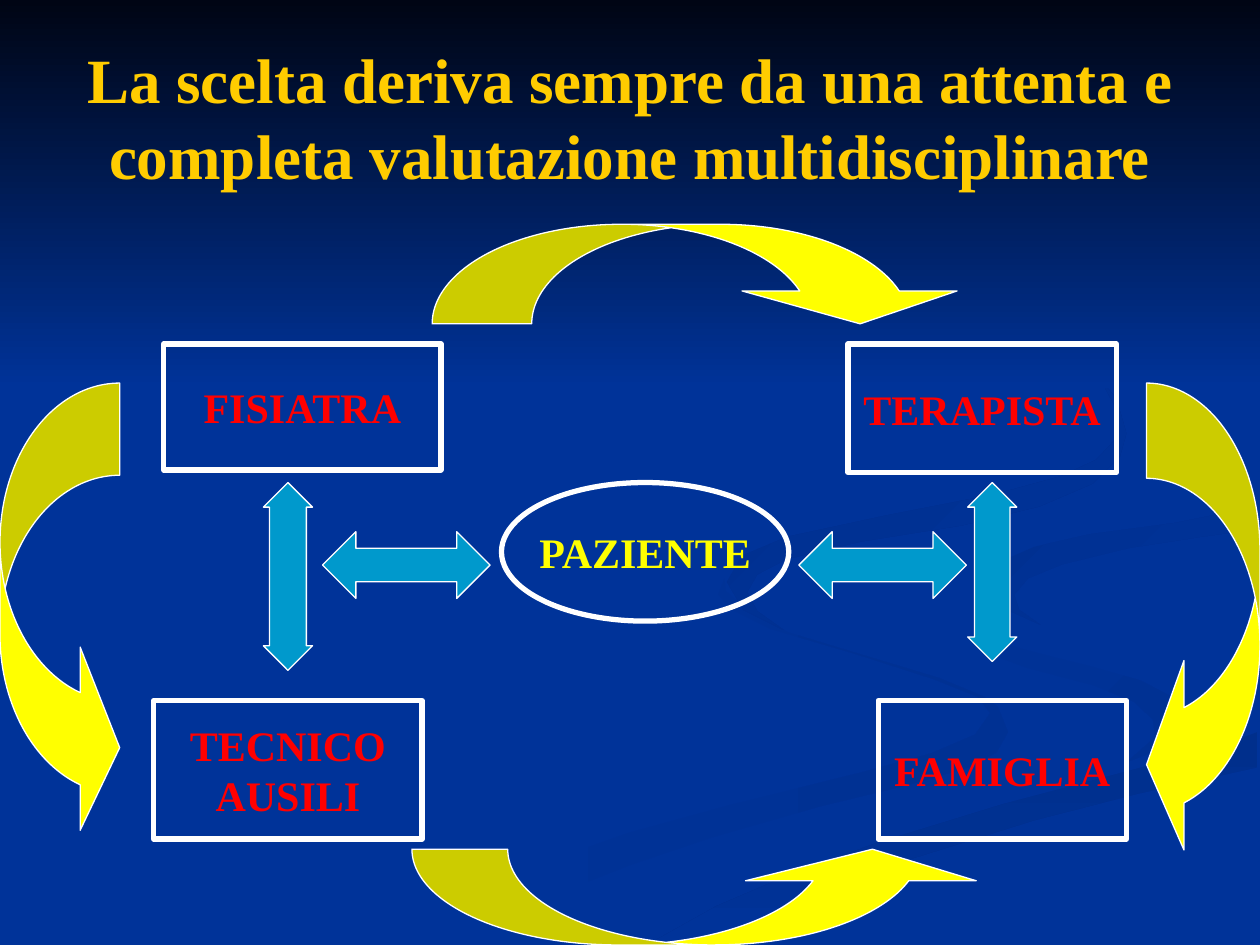
import pptx
import pptx.dml.color
import pptx.enum.shapes
import pptx.enum.text
import pptx.util

Inches = pptx.util.Inches
SHAPE = pptx.enum.shapes.MSO_SHAPE
FONT = "Times New Roman"
NAVY, WHITE, GOLD, YELLOW, RED, TEAL = (
    "003399", "FFFFFF", "FFCC00", "FFFF00", "FF0000", "0099CC")

# Background ribbons: start colour, end colour, clockwise angle, outline
RIBBONS = [
    (NAVY, "003193", 0, [
        (7.81, 5.53), (7.45, 5.38), (6.82, 5.19), (6.26, 5.02), (5.94, 4.85),
        (5.76, 4.69), (5.75, 4.59), (5.7, 4.72), (5.81, 4.84), (6.11, 4.99),
        (6.79, 5.19), (7.41, 5.39), (7.76, 5.53), (7.86, 5.66), (7.74, 5.83),
        (7.39, 5.98), (6.84, 6.13), (5.79, 6.39), (4.99, 6.61), (4.17, 6.9),
        (3.38, 7.27), (3, 7.49), (3.61, 7.49), (4.31, 7.14), (4.99, 6.87),
        (5.64, 6.65), (6.51, 6.4), (7.21, 6.23), (7.69, 6.09), (7.91, 5.97),
        (8, 5.81), (7.92, 5.61)]),
    (NAVY, "003193", 45, [
        (9.43, 5.7), (9.3, 5.53), (9.05, 5.4), (8.7, 5.3), (8.11, 5.15),
        (7.58, 4.98), (7.33, 4.83), (7.24, 4.64), (7.27, 4.79), (7.39, 4.94),
        (7.66, 5.12), (8.15, 5.3), (8.68, 5.44), (9, 5.57), (9.15, 5.71),
        (9.17, 5.85), (8.94, 6.05), (9.25, 5.93), (9.41, 5.81)]),
    ("002F8C", NAVY, 90, [
        (5.03, 7.49), (5.71, 7.49), (6, 7.33), (6.49, 7.1), (7.22, 6.82),
        (8.21, 6.51), (9.03, 6.3), (9.98, 6.09), (9.98, 5.81), (9.63, 5.94),
        (9.03, 6.1), (7.97, 6.38), (6.96, 6.69), (6.3, 6.93), (5.69, 7.19),
        (5.19, 7.47)]),
    ("003091", NAVY, 45, [
        (7.81, 4.6), (7.86, 4.74), (7.97, 4.83), (8.26, 4.96), (8.09, 4.84),
        (8.05, 4.72), (8.16, 4.59), (8.43, 4.48), (8.96, 4.35), (9.54, 4.26),
        (9.98, 4.2), (9.98, 4.02), (9.33, 4.15), (8.65, 4.24), (8.21, 4.34),
        (7.91, 4.47)]),
    ("002F8E", NAVY, 45, [
        (6.83, 4.3), (7.64, 4.17), (8.25, 4.02), (8.67, 3.84), (8.89, 3.62),
        (8.94, 3.44), (8.86, 3.16), (8.64, 2.91), (8.21, 2.61), (7.8, 2.41),
        (7.62, 2.33), (8.05, 2.54), (8.46, 2.79), (8.76, 3.06), (8.88, 3.28),
        (8.86, 3.48), (8.7, 3.65), (8.42, 3.78), (7.91, 3.92), (7.04, 4.09),
        (6.25, 4.26), (5.89, 4.41), (5.77, 4.62), (5.9, 4.84), (6.22, 5),
        (6.01, 4.85), (5.93, 4.7), (6.01, 4.56), (6.24, 4.44)]),
]

ROLES = [
    (SHAPE.OVAL, (3.98, 3.83, 2.28, 1.1), "PAZIENTE", YELLOW),
    (SHAPE.RECTANGLE, (1.3, 2.73, 2.2, 1), "FISIATRA", RED),
    (SHAPE.RECTANGLE, (6.73, 2.73, 2.13, 1.02), "TERAPISTA", RED),
    (SHAPE.RECTANGLE, (1.22, 5.56, 2.13, 1.1), "TECNICO\nAUSILI", RED),
    (SHAPE.RECTANGLE, (6.97, 5.56, 1.97, 1.1), "FAMIGLIA", RED),
]

ARROWS = [
    (SHAPE.UP_DOWN_ARROW, (2.09, 3.83, 0.39, 1.49), (0.5, 0.75), TEAL),
    (SHAPE.UP_DOWN_ARROW, (7.68, 3.83, 0.39, 1.42), (0.5, 0.72), TEAL),
    (SHAPE.LEFT_RIGHT_ARROW, (2.56, 4.22, 1.33, 0.53), (0.5, 0.5), TEAL),
    (SHAPE.LEFT_RIGHT_ARROW, (6.34, 4.22, 1.33, 0.53), (0.5, 0.5), TEAL),
    (SHAPE.CURVED_RIGHT_ARROW, (0, 3.04, 0.95, 3.62), (0.77, 1.53, 0.33), YELLOW),
    (SHAPE.CURVED_UP_ARROW, (3.27, 6.74, 4.57, 0.76), (1.21, 2.41, 0.33), YELLOW),
    (SHAPE.CURVED_LEFT_ARROW, (9.1, 3.04, 0.9, 3.78), (0.84, 1.67, 0.33), YELLOW),
    (SHAPE.CURVED_DOWN_ARROW, (3.43, 1.78, 4.25, 0.79), (1.08, 2.16, 0.33), YELLOW),
]


def rgb(color):
    return pptx.dml.color.RGBColor.from_string(color)


def set_gradient(sp, start, end, angle):
    """Fill without outline; the angle runs clockwise in degrees."""
    sp.shadow.inherit = False
    sp.line.fill.background()
    sp.fill.gradient()
    sp.fill.gradient_angle = (360 - angle) % 360
    for stop, color in zip(sp.fill.gradient_stops, (start, end)):
        stop.color.rgb = rgb(color)


def add_backdrop(s):
    s.background.fill.solid()
    s.background.fill.fore_color.rgb = rgb(NAVY)
    for start, end, angle, points in RIBBONS:
        points = [(Inches(x), Inches(y)) for x, y in points]
        builder = s.shapes.build_freeform(*points[0])
        builder.add_line_segments(points[1:], close=True)
        set_gradient(builder.convert_to_shape(), start, end, angle)
    sky = s.shapes.add_shape(SHAPE.RECTANGLE, 0, 0, Inches(10), Inches(3.08))
    set_gradient(sky, "000514", NAVY, 90)


def write_text(tf, text, size, color):
    tf.text = text
    tf.vertical_anchor = pptx.enum.text.MSO_ANCHOR.MIDDLE
    for p in tf.paragraphs:
        p.alignment = pptx.enum.text.PP_ALIGN.CENTER
        for r in p.runs:
            r.font.name = FONT
            r.font.size = pptx.util.Pt(size)
            r.font.bold = True
            r.font.color.rgb = rgb(color)


def add_title(s, text):
    title = s.shapes.title
    title.left, title.top = Inches(0.5), Inches(0.3)
    title.width, title.height = Inches(9), Inches(1.25)
    write_text(title.text_frame, text, 36, GOLD)
    # Bring the title in front of the backdrop
    title.element.getparent().append(title.element)


def add_outlined(s, kind, box, line_width):
    sp = s.shapes.add_shape(kind, *map(Inches, box))
    sp.shadow.inherit = False
    sp.line.color.rgb = rgb(WHITE)
    sp.line.width = pptx.util.Pt(line_width)
    return sp


def add_role(s, kind, box, text, color):
    sp = add_outlined(s, kind, box, 3)
    sp.fill.background()
    write_text(sp.text_frame, text, 24, color)
    sp.text_frame.word_wrap = False


def add_arrow(s, kind, box, adjustments, color):
    sp = add_outlined(s, kind, box, 0.75)
    sp.fill.solid()
    sp.fill.fore_color.rgb = rgb(color)
    for i, value in enumerate(adjustments):
        sp.adjustments[i] = value


def main():
    prs = pptx.Presentation()
    prs.slide_width, prs.slide_height = Inches(10), Inches(7.5)
    s = prs.slides.add_slide(prs.slide_layouts[5])
    add_backdrop(s)
    add_title(s, "La scelta deriva sempre da una attenta e "
                 "completa valutazione multidisciplinare")
    for role in ROLES:
        add_role(s, *role)
    for arrow in ARROWS:
        add_arrow(s, *arrow)
    prs.save("out.pptx")


if __name__ == "__main__":
    main()
